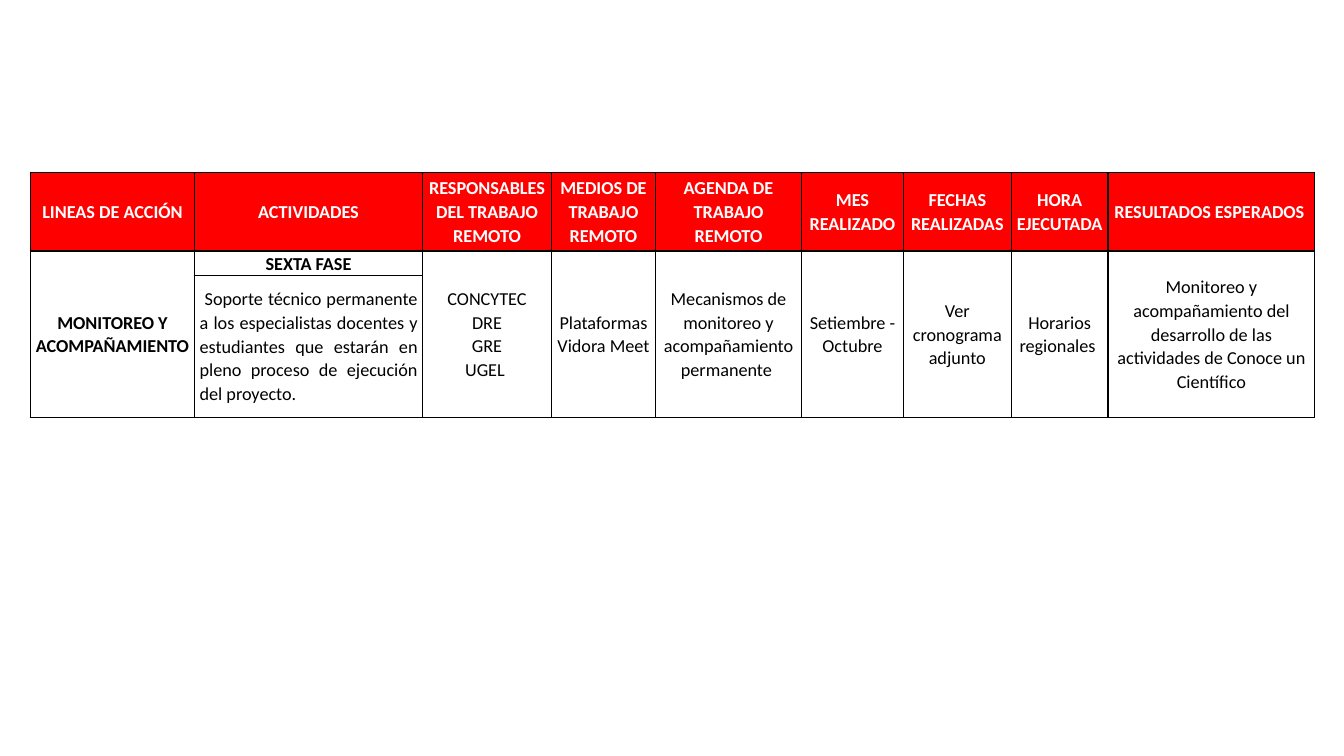
from lxml import etree
from pptx import Presentation
from pptx import util as u
from pptx.dml import color
from pptx.enum import text
from pptx.oxml import ns

PX = 9144
RED, WHITE, BLACK = "FF0000", "FFFFFF", "000000"
COLUMN_WIDTHS = [163, 226, 128, 103, 145, 101, 107, 96, 205]
ROW_HEIGHTS = [78, 24, 141]
HEADERS = [
    "LINEAS DE ACCIÓN",
    "ACTIVIDADES",
    "RESPONSABLES DEL TRABAJO REMOTO",
    "MEDIOS DE TRABAJO REMOTO",
    "AGENDA DE TRABAJO REMOTO",
    "MES REALIZADO",
    "FECHAS REALIZADAS",
    "HORA EJECUTADA ",
    "RESULTADOS ESPERADOS ",
]
PHASE = [
    "MONITOREO Y ACOMPAÑAMIENTO",
    "SEXTA FASE",
    "CONCYTEC\nDRE\nGRE\nUGEL ",
    "Plataformas\nVidora Meet",
    "Mecanismos de monitoreo y acompañamiento permanente ",
    "Setiembre - Octubre",
    "Ver cronograma adjunto",
    "Horarios regionales ",
    "Monitoreo y acompañamiento del desarrollo de las actividades de Conoce un Científico",
]
ACTIVITY = (
    " Soporte técnico permanente a los especialistas docentes y estudiantes "
    "que estarán en pleno proceso de ejecución del proyecto."
)


def px(length):
    return u.Emu(length * PX)


def rgb(value):
    return color.RGBColor.from_string(value)


def write(frame, content, size=13, ink=BLACK, bold=False, align=text.PP_ALIGN.CENTER):
    frame.word_wrap = True
    for index, line in enumerate(content.split("\n")):
        paragraph = frame.paragraphs[0] if index == 0 else frame.add_paragraph()
        paragraph.alignment = align
        paragraph.line_spacing = 1.07
        run = paragraph.add_run()
        run.text = line
        run.font.name = "Calibri"
        run.font.size = u.Pt(size)
        run.font.bold = bold
        run.font.color.rgb = rgb(ink)


def add_borders(cell, ink=BLACK, width=1):
    properties = cell._tc.get_or_add_tcPr()
    for index, side in enumerate(("lnL", "lnR", "lnT", "lnB")):
        line = etree.Element(ns.qn(f"a:{side}"), w=str(u.Pt(width)))
        fill = etree.SubElement(line, ns.qn("a:solidFill"))
        etree.SubElement(fill, ns.qn("a:srgbClr"), val=ink)
        properties.insert(index, line)


def style_cell(cell, fill=None):
    cell.margin_left = cell.margin_right = px(5)
    cell.margin_top = cell.margin_bottom = 0
    cell.vertical_anchor = text.MSO_ANCHOR.MIDDLE
    if fill:
        cell.fill.solid()
        cell.fill.fore_color.rgb = rgb(fill)
    else:
        cell.fill.background()
    add_borders(cell)


def add_schedule(slide, left, top, width, height):
    table = slide.shapes.add_table(
        len(ROW_HEIGHTS), len(COLUMN_WIDTHS), px(left), px(top), px(width), px(height)
    ).table
    table.horz_banding = False
    for column, column_width in zip(table.columns, COLUMN_WIDTHS):
        column.width = px(column_width)
    for row_index, row_height in enumerate(ROW_HEIGHTS):
        table.rows[row_index].height = px(row_height)
        for cell in table.rows[row_index].cells:
            style_cell(cell, fill=RED if row_index == 0 else None)
    for index, (header, entry) in enumerate(zip(HEADERS, PHASE)):
        write(table.cell(0, index).text_frame, header, ink=WHITE, bold=True)
        if index != 1:
            table.cell(1, index).merge(table.cell(2, index))
        write(table.cell(1, index).text_frame, entry, bold=index < 2)
    write(table.cell(2, 1).text_frame, ACTIVITY, align=text.PP_ALIGN.JUSTIFY)


def main():
    presentation = Presentation()
    presentation.slide_width, presentation.slide_height = px(1333), px(750)
    slide = presentation.slides.add_slide(presentation.slide_layouts[6])
    add_schedule(slide, 30, 171, sum(COLUMN_WIDTHS), sum(ROW_HEIGHTS))
    presentation.save("out.pptx")


if __name__ == "__main__":
    main()
